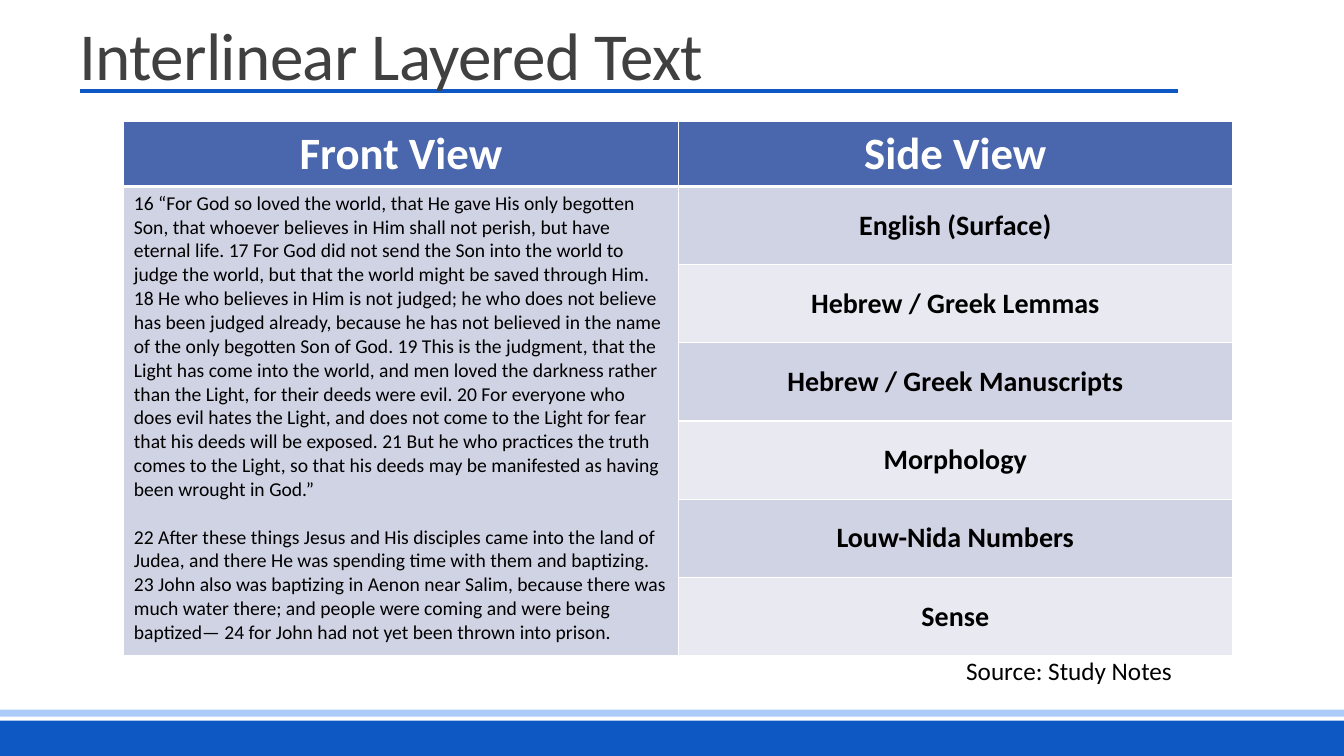
from dataclasses import dataclass

import lxml.etree
import pptx
import pptx.dml.color
import pptx.enum.shapes
import pptx.enum.text
import pptx.oxml
import pptx.oxml.ns
import pptx.util

Cm = pptx.util.Cm
Pt = pptx.util.Pt
Align = pptx.enum.text.PP_ALIGN
Anchor = pptx.enum.text.MSO_ANCHOR


@dataclass(frozen=True)
class Theme:
    font: str = "Calibri"
    blue: str = "0E58C4"
    light_blue: str = "ACCBF9"
    header: str = "4A66AC"
    dark_band: str = "D0D3E3"
    light_band: str = "E9EAF1"
    white: str = "FFFFFF"
    black: str = "000000"
    title_grey: str = "404040"
    title_size: int = 48
    header_size: int = 32
    layer_size: int = 20
    source_size: int = 18
    verse_size: int = 14


@dataclass(frozen=True)
class Style:
    size: int
    color: str
    bold: bool = False
    align: Align = Align.LEFT


@dataclass(frozen=True)
class Band:
    top: float
    height: float
    color: str


@dataclass(frozen=True)
class Label:
    text: str
    left: float
    top: float
    width: float
    height: float
    style: Style
    wrap: bool
    anchor: Anchor


THEME = Theme()
SLIDE_WIDTH, SLIDE_HEIGHT = 33.87, 19.05
HEADER_HEIGHT, LAYER_HEIGHT, COLUMN_WIDTH = 1.63, 1.97, 13.97

HEADER_STYLE = Style(THEME.header_size, THEME.white, True, Align.CENTER)
LAYER_STYLE = Style(THEME.layer_size, THEME.black, True, Align.CENTER)
VERSE_STYLE = Style(THEME.verse_size, THEME.black)

FOOTER_BANDS = [
    Band(18.16, 0.89, THEME.blue),
    Band(17.88, 0.18, THEME.light_blue),
]
TITLE = Label("Interlinear Layered Text", 1.75, 0.23, 27.94, 2.26,
              Style(THEME.title_size, THEME.title_grey), True, Anchor.BOTTOM)
SOURCE = Label("Source: Study Notes", 24.1, 16.38, 6.02, 1.02,
               Style(THEME.source_size, THEME.black), False, Anchor.TOP)
HEADINGS = ["Front View", "Side View"]
LAYERS = ["English (Surface)", "Hebrew / Greek Lemmas", "Hebrew / Greek Manuscripts",
          "Morphology", "Louw-Nida Numbers", "Sense"]
VERSES = [
    "16 “For God so loved the world, that He gave His only begotten Son, that whoever "
    "believes in Him shall not perish, but have eternal life. 17 For God did not send the "
    "Son into the world to judge the world, but that the world might be saved through Him. "
    "18 He who believes in Him is not judged; he who does not believe has been judged "
    "already, because he has not believed in the name of the only begotten Son of God. "
    "19 This is the judgment, that the Light has come into the world, and men loved the "
    "darkness rather than the Light, for their deeds were evil. 20 For everyone who does "
    "evil hates the Light, and does not come to the Light for fear that his deeds will be "
    "exposed. 21 But he who practices the truth comes to the Light, so that his deeds may "
    "be manifested as having been wrought in God.”",
    "22 After these things Jesus and His disciples came into the land of Judea, and there "
    "He was spending time with them and baptizing. 23 John also was baptizing in Aenon near "
    "Salim, because there was much water there; and people were coming and were being "
    "baptized— 24 for John had not yet been thrown into prison.",
]


def rgb(color: str) -> pptx.dml.color.RGBColor:
    return pptx.dml.color.RGBColor.from_string(color)


def write(frame, text: str, style: Style) -> None:
    frame.text = text
    for para in frame.paragraphs:
        para.alignment = style.align
        for span in para.runs:
            span.font.name = THEME.font
            span.font.size = Pt(style.size)
            span.font.bold = style.bold
            span.font.color.rgb = rgb(style.color)


def add_band(page, band: Band) -> None:
    box = page.shapes.add_shape(pptx.enum.shapes.MSO_SHAPE.RECTANGLE, 0, Cm(band.top),
                                Cm(SLIDE_WIDTH), Cm(band.height))
    box.shadow.inherit = False
    box.fill.solid()
    box.fill.fore_color.rgb = rgb(band.color)
    box.line.fill.background()


def add_title_rule(page) -> None:
    rule = page.shapes.add_connector(pptx.enum.shapes.MSO_CONNECTOR.STRAIGHT,
                                     Cm(2.01), Cm(2.29), Cm(29.69), Cm(2.29))
    rule.line.color.rgb = rgb(THEME.blue)
    rule.line.width = Pt(3)
    properties = rule._element.spPr
    lxml.etree.SubElement(properties, pptx.oxml.ns.qn("a:effectLst"))


def add_label(page, label: Label):
    box = page.shapes.add_textbox(Cm(label.left), Cm(label.top),
                                  Cm(label.width), Cm(label.height))
    frame = box.text_frame
    frame.word_wrap = label.wrap
    frame.vertical_anchor = label.anchor
    write(frame, label.text, label.style)
    return box


def set_borders(cell, bottom_width: int) -> None:
    properties = cell._tc.get_or_add_tcPr()
    widths = {"lnL": 1, "lnR": 1, "lnT": 1, "lnB": bottom_width}
    for position, (side, width) in enumerate(widths.items()):
        border = pptx.oxml.parse_xml(
            f'<a:{side} {pptx.oxml.ns.nsdecls("a")} w="{Pt(width)}"><a:solidFill>'
            f'<a:srgbClr val="{THEME.white}"/></a:solidFill></a:{side}>')
        properties.insert(position, border)


def fill_cell(cell, text: str, style: Style, color: str, anchor: Anchor) -> None:
    write(cell.text_frame, text, style)
    cell.vertical_anchor = anchor
    cell.fill.solid()
    cell.fill.fore_color.rgb = rgb(color)


def add_view_table(page) -> None:
    row_count = len(LAYERS) + 1
    table = page.shapes.add_table(
        row_count, len(HEADINGS), Cm(3.12), Cm(3.07), Cm(COLUMN_WIDTH * len(HEADINGS)),
        Cm(HEADER_HEIGHT + LAYER_HEIGHT * len(LAYERS))).table
    table.horz_banding = False
    for column in table.columns:
        column.width = Cm(COLUMN_WIDTH)
    for index, row in enumerate(table.rows):
        row.height = Cm(LAYER_HEIGHT if index else HEADER_HEIGHT)
        for cell in row.cells:
            set_borders(cell, 1 if index else 3)

    # Header row
    for column, heading in enumerate(HEADINGS):
        fill_cell(table.cell(0, column), heading, HEADER_STYLE, THEME.header, Anchor.TOP)

    # Front view: one tall cell of verses
    front = table.cell(1, 0)
    front.merge(table.cell(row_count - 1, 0))
    fill_cell(front, "\n".join(VERSES), VERSE_STYLE, THEME.dark_band, Anchor.TOP)
    front.text_frame.paragraphs[1].space_before = Pt(17)

    # Side view: one row per layer
    for row, layer in enumerate(LAYERS, start=1):
        color = THEME.dark_band if row % 2 else THEME.light_band
        fill_cell(table.cell(row, 1), layer, LAYER_STYLE, color, Anchor.MIDDLE)


def main() -> None:
    deck = pptx.Presentation()
    deck.slide_width, deck.slide_height = Cm(SLIDE_WIDTH), Cm(SLIDE_HEIGHT)
    page = deck.slides.add_slide(deck.slide_layouts[6])

    # Footer bands and title
    for band in FOOTER_BANDS:
        add_band(page, band)
    add_title_rule(page)
    title_para = add_label(page, TITLE).text_frame.paragraphs[0]
    title_para.line_spacing = 0.85
    title_para.runs[0].font._element.set("spc", "-50")

    # Table and source
    add_view_table(page)
    add_label(page, SOURCE)
    deck.save("out.pptx")


if __name__ == "__main__":
    main()
